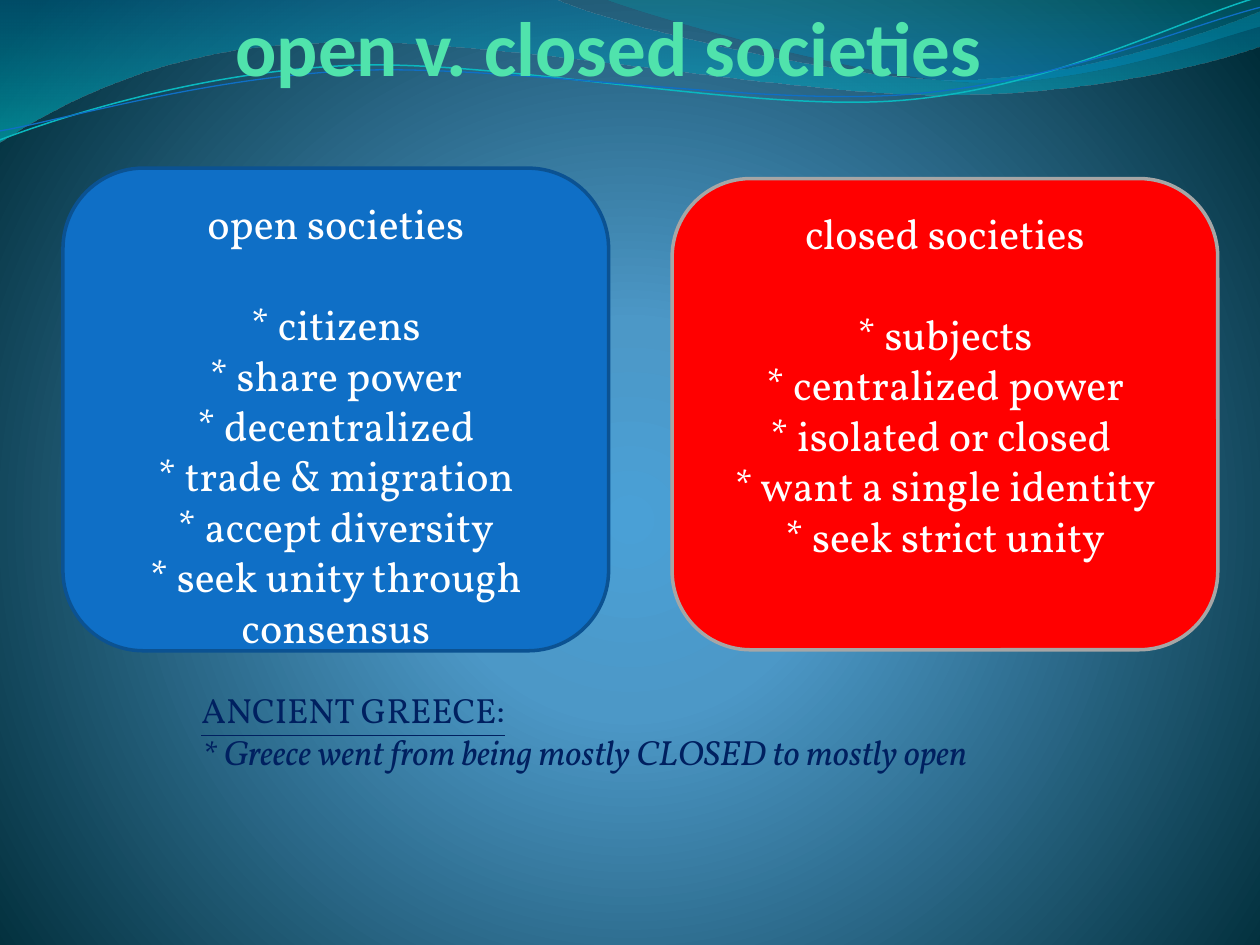
from lxml.etree import SubElement
from pptx import Presentation
from pptx.dml.color import RGBColor
from pptx.enum.shapes import MSO_SHAPE
from pptx.enum.text import MSO_ANCHOR, MSO_AUTO_SIZE, PP_ALIGN
from pptx.oxml.ns import qn
from pptx.util import Cm, Pt

COLORS = {
    "glow": "4AA0D6", "sky": "4C98C7", "night": "002C38",
    "ocean": "0074A1", "aqua": "00C6CF", "teal": "00A1A9", "azure": "008BBF",
    "cyan line": "0AB8BF", "blue": "0F6FC6", "dark blue": "0B5292",
    "red": "FF0000", "gray": "A6A6A6",
    "mint": "50E3AC", "navy": "002060", "white": "FFFFFF",
}


def set_gradient(fill, properties, stops, focus=None):
    fill.solid()
    solid = properties.find(qn("a:solidFill"))
    gradient = solid.makeelement(qn("a:gradFill"), {"rotWithShape": "1"})
    properties.replace(solid, gradient)
    stop_list = SubElement(gradient, qn("a:gsLst"))
    for position, color, opacity in stops:
        stop = SubElement(stop_list, qn("a:gs"), pos=str(position * 1000))
        value = SubElement(stop, qn("a:srgbClr"), val=COLORS[color])
        if opacity < 100:
            SubElement(value, qn("a:alpha"), val=str(opacity * 1000))
    if focus:
        circle = SubElement(gradient, qn("a:path"), path="circle")
        SubElement(circle, qn("a:fillToRect"), {side: str(share * 1000) for side, share in focus.items()})
    else:
        SubElement(gradient, qn("a:lin"), ang="5400000", scaled="1")


def write_paragraphs(frame, lines, alignment, **formats):
    frame.word_wrap = True
    frame.vertical_anchor = MSO_ANCHOR.TOP
    for index, (text, extra) in enumerate(lines):
        paragraph = frame.paragraphs[0] if index == 0 else frame.add_paragraph()
        paragraph.alignment = alignment
        run = paragraph.add_run()
        run.text = text
        values = {**formats, **extra}
        run.font.color.rgb = RGBColor.from_string(COLORS[values.pop("color")])
        for name, value in values.items():
            setattr(run.font, name, value)


presentation = Presentation()
presentation.slide_width = Cm(25.4)
presentation.slide_height = Cm(19.05)
slide = presentation.slides.add_slide(presentation.slide_layouts[6])

background_fill = slide.background.fill
set_gradient(
    background_fill,
    slide.background._cSld.bg.bgPr,
    [(0, "glow", 100), (25, "sky", 100), (100, "night", 100)],
    {"l": 10, "t": 110, "r": 10, "b": 100},
)

waves = [
    {"start": (0, 0), "steps": [
        [(11.18, -0.03)],
        [(12.09, 0.43), (16.87, 1.6), (19.25, 1.6)],
        [(21.67, 1.6), (24.33, 0.66), (25.4, 0.23)],
        [(25.43, 0.91)],
        [(24.97, 1.12), (22.1, 1.93), (18.95, 1.91)],
        [(15.8, 1.91), (9.7, 0.71), (6.53, 0.86)],
        [(3.28, 0.91), (1.17, 2.11), (-0.03, 2.87)],
    ], "stops": [(0, "ocean", 45), (100, "aqua", 55)]},
    {"start": (12.17, -0.03), "steps": [
        [(12.93, 0.28), (17.32, 1.57), (19.53, 1.65)],
        [(21.74, 1.75), (24.41, 0.81), (25.4, 0.53)],
        [(25.4, 0)],
    ], "stops": [(0, "teal", 30), (80, "azure", 45)]},
    {"start": (0, 2.82), "steps": [
        [(1.22, 2.36), (4.01, 1.45), (7.04, 1.32)],
        [(10.03, 1.19), (15.06, 2.26), (18.11, 2.03)],
        [(21.16, 1.8), (23.83, 0.38), (25.35, -0.05)],
    ], "line": ("cyan line", 0.85)},
    {"start": (0, 2.64), "steps": [
        [(1.19, 2.44), (4.17, 1.55), (7.19, 1.42)],
        [(10.24, 1.3), (15.16, 2.13), (18.21, 1.91)],
        [(21.23, 1.7), (23.9, 0.53), (25.4, 0.15)],
    ], "line": ("blue", 0.75)},
]
for wave in waves:
    x, y = wave["start"]
    builder = slide.shapes.build_freeform(Cm(x), Cm(y))
    ends = [step[-1] for step in wave["steps"]]
    builder.add_line_segments([(Cm(x), Cm(y)) for x, y in ends], close="stops" in wave)
    shape = builder.convert_to_shape()
    shape.shadow.inherit = False
    edges = list(shape._element.iter(qn("a:lnTo")))
    for edge, step in zip(edges, wave["steps"]):
        if len(step) == 3:
            curve = edge.makeelement(qn("a:cubicBezTo"), {})
            for x, y in step:
                SubElement(curve, qn("a:pt"), x=str(Cm(x) - shape.left), y=str(Cm(y) - shape.top))
            edge.getparent().replace(edge, curve)
    if "stops" in wave:
        set_gradient(shape.fill, shape._element.spPr, wave["stops"])
        shape.line.fill.background()
    else:
        color, width = wave["line"]
        shape.fill.background()
        shape.line.color.rgb = RGBColor.from_string(COLORS[color])
        shape.line.width = Pt(width)

title = slide.shapes.add_textbox(Cm(1.48), Cm(0), Cm(21.59), Cm(3.78))
for side in ("left", "top", "right", "bottom"):
    setattr(title.text_frame, f"margin_{side}", Cm(0))
write_paragraphs(
    title.text_frame, [("open v. closed societies", {})], PP_ALIGN.CENTER,
    name="Calibri", size=Pt(44), bold=True, color="mint",
)

greece = slide.shapes.add_textbox(Cm(3.81), Cm(13.76), Cm(18.62), Cm(1.96))
greece.text_frame.auto_size = MSO_AUTO_SIZE.SHAPE_TO_FIT_TEXT
write_paragraphs(
    greece.text_frame,
    [
        ("ANCIENT GREECE:", {"underline": True}),
        ("* Greece went from being mostly CLOSED to mostly open", {"italic": True}),
    ],
    PP_ALIGN.LEFT, name="Vollkorn", size=Pt(20), color="navy",
)

cards = [
    (1.27, 3.39, 9.73, "blue", "dark blue", "open societies", [
        "citizens", "share power", "decentralized", "trade & migration",
        "accept diversity", "seek unity through consensus",
    ]),
    (13.55, 3.6, 9.5, "red", "gray", "closed societies", [
        "subjects", "centralized power", "isolated or closed ",
        "want a single identity", "seek strict unity",
    ]),
]
for left, top, height, fill, line, heading, traits in cards:
    card = slide.shapes.add_shape(MSO_SHAPE.ROUNDED_RECTANGLE, Cm(left), Cm(top), Cm(11), Cm(height))
    card.shadow.inherit = False
    card.fill.solid()
    card.fill.fore_color.rgb = RGBColor.from_string(COLORS[fill])
    card.line.color.rgb = RGBColor.from_string(COLORS[line])
    card.line.width = Pt(2)
    lines = [(heading, {})] + [(f"* {trait}", {}) for trait in traits]
    write_paragraphs(card.text_frame, lines, PP_ALIGN.CENTER, name="Vollkorn", size=Pt(24), color="white")
    card.text_frame.paragraphs[0].space_after = Pt(28.8)

presentation.save("out.pptx")
